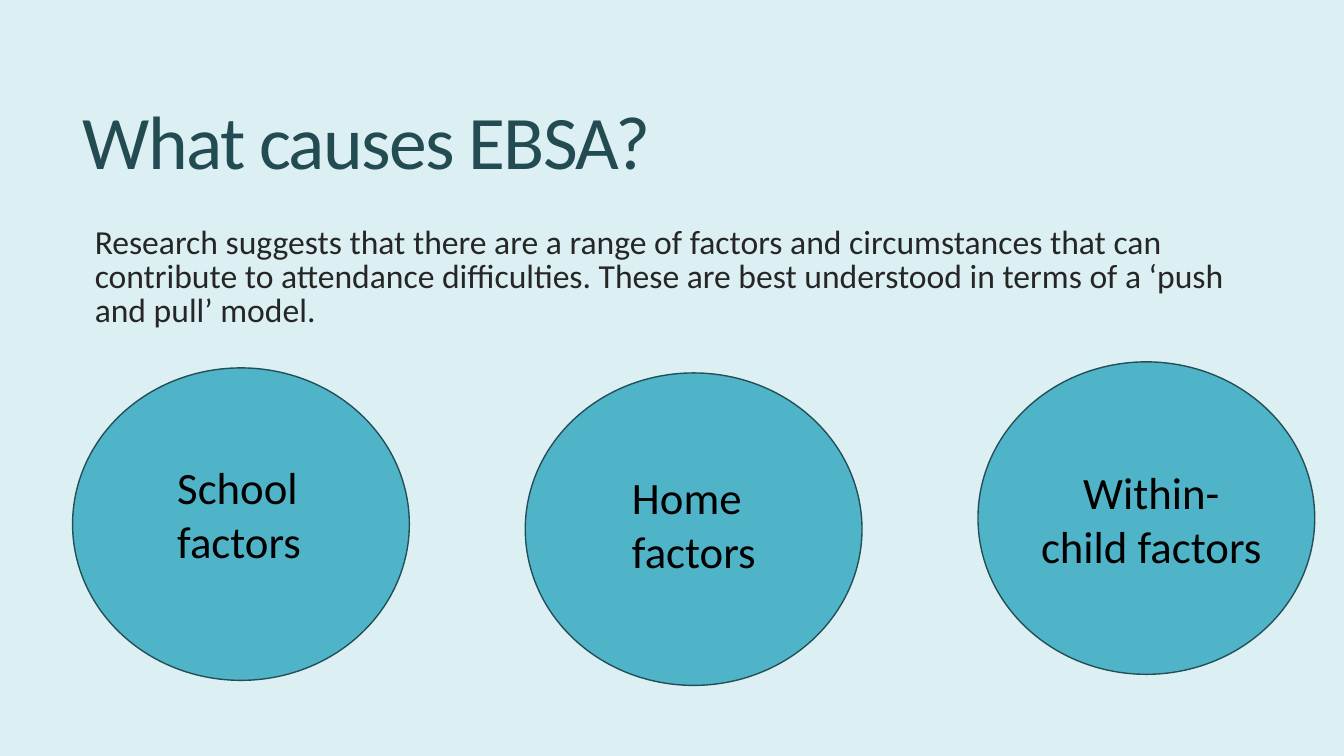
from pptx import Presentation
from pptx.dml.color import RGBColor
from pptx.enum.shapes import MSO_SHAPE
from pptx.enum.text import MSO_ANCHOR, MSO_AUTO_SIZE, PP_ALIGN
from pptx.util import Inches, Pt

OVAL = MSO_SHAPE.OVAL
TOP, MIDDLE = MSO_ANCHOR.TOP, MSO_ANCHOR.MIDDLE
LEFT, CENTER = PP_ALIGN.LEFT, PP_ALIGN.CENTER
NO_AUTOFIT = MSO_AUTO_SIZE.NONE

# Content
TITLE = "What causes EBSA?"
INTRO = (
    "Research suggests that there are a range of factors and circumstances "
    "that can contribute to attendance difficulties. These are best understood "
    "in terms of a ‘push and pull’ model."
)
# Label, circle left and top, label left and top, alignment
FACTORS = [
    ("School factors", 0.72, 3.65, 1.66, 4.51, LEFT),
    ("Home factors", 5.21, 3.7, 6.17, 4.61, LEFT),
    ("Within-child factors", 9.7, 3.59, 10.22, 4.56, CENTER),
]
CIRCLE_SIZE = (3.34, 3.1)
LABEL_SIZE = (2.4, 1.18)

COLORS = {
    "background": "DCF0F4",
    "title": "234B52",
    "intro": "262626",
    "circle": "50B4C8",
    "outline": "234F58",
    "label": "000000",
}


def color(name):
    return RGBColor.from_string(COLORS[name])


def write(shape, text, size, color_name, anchor=TOP, **paragraph_format):
    frame = shape.text_frame
    frame.word_wrap = True
    frame.auto_size = NO_AUTOFIT
    frame.vertical_anchor = anchor
    paragraph = frame.paragraphs[0]
    for name, value in paragraph_format.items():
        setattr(paragraph, name, value)
    run = paragraph.add_run()
    run.text = text
    for name, value in {"name": "Calibri", "size": Pt(size)}.items():
        setattr(run.font, name, value)
    run.font.color.rgb = color(color_name)
    return run


def add_text_box(slide, left, top, size):
    return slide.shapes.add_textbox(*map(Inches, (left, top, *size)))


def add_circle(slide, left, top):
    circle = slide.shapes.add_shape(OVAL, *map(Inches, (left, top, *CIRCLE_SIZE)))
    circle.shadow.inherit = False
    circle.fill.solid()
    circle.fill.fore_color.rgb = color("circle")
    circle.line.color.rgb = color("outline")
    circle.line.width = Pt(1)


def main():
    presentation = Presentation()
    presentation.slide_width = Inches(13.33)
    presentation.slide_height = Inches(7.5)
    slide = presentation.slides.add_slide(presentation.slide_layouts[5])
    slide.background.fill.solid()
    slide.background.fill.fore_color.rgb = color("background")

    # Title, with tightened letter spacing
    title = slide.shapes.title
    title.left, title.top, title.width, title.height = map(
        Inches, (0.72, 0.55, 11.78, 1.81))
    run = write(title, TITLE, 54, "title", MIDDLE, alignment=LEFT, line_spacing=0.85)
    run._r.get_or_add_rPr().set("spc", "-120")

    # Introduction
    intro = add_text_box(slide, 0.74, 2.2, (11.76, 1.2))
    intro.text_frame.margin_left = Inches(0.2)
    write(intro, INTRO, 24, "intro", line_spacing=0.85)

    # Factor circles and their labels
    for label, left, top, label_left, label_top, alignment in FACTORS:
        add_circle(slide, left, top)
        box = add_text_box(slide, label_left, label_top, LABEL_SIZE)
        write(box, label, 32, "label", alignment=alignment)

    presentation.save("out.pptx")


if __name__ == "__main__":
    main()
